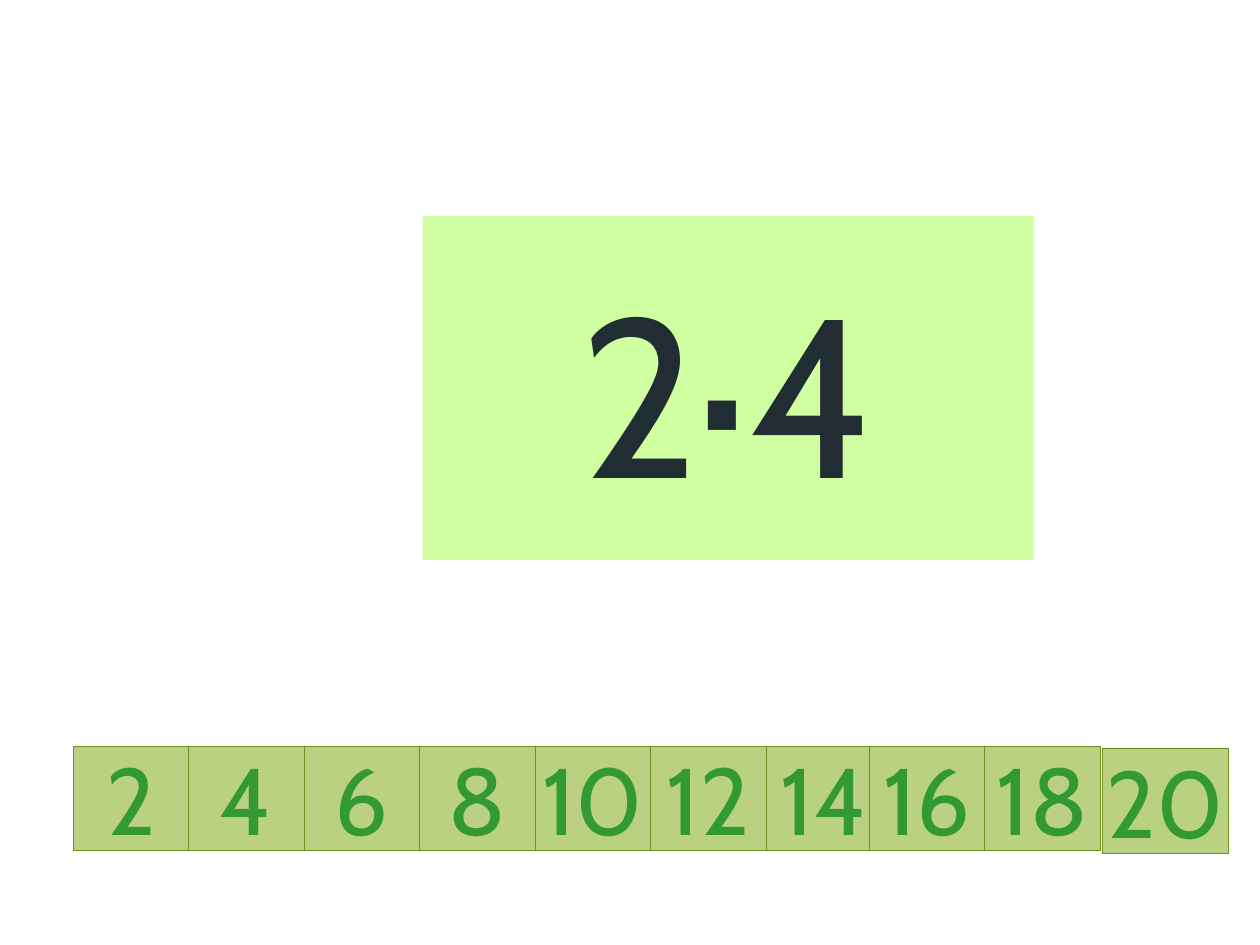
from lxml import etree
from pptx import Presentation
from pptx.dml.color import RGBColor
from pptx.enum.shapes import MSO_SHAPE
from pptx.enum.text import MSO_ANCHOR, PP_ALIGN
from pptx.oxml.ns import qn
from pptx.util import Inches, Pt

BUTTON = MSO_SHAPE.ACTION_BUTTON_CUSTOM
RECTANGLE = MSO_SHAPE.RECTANGLE
MIDDLE = MSO_ANCHOR.MIDDLE
CENTER = PP_ALIGN.CENTER

FONT = "Cabin"
BUTTON_FILL = RGBColor(0xB9, 0xD1, 0x81)
BUTTON_LINE = RGBColor(0x6C, 0x92, 0x1D)
BUTTON_TEXT = RGBColor(0x33, 0x99, 0x33)
CARD_FILL = RGBColor(0xCC, 0xFF, 0x99)
CARD_TEXT = RGBColor(0x21, 0x2D, 0x32)


def add_box(kind, text, left, top, width, height, *, fill, line, line_width, color, size):
    shape = slide.shapes.add_shape(
        kind, Inches(left), Inches(top), Inches(width), Inches(height))
    shape.shadow.inherit = False
    shape.fill.solid()
    shape.fill.fore_color.rgb = fill
    shape.line.color.rgb = line
    shape.line.width = Pt(line_width)
    frame = shape.text_frame
    frame.word_wrap = False
    frame.vertical_anchor = MIDDLE
    paragraph = frame.paragraphs[0]
    paragraph.alignment = CENTER
    run = paragraph.add_run()
    run.text = text
    run.font.name = FONT
    run.font.size = Pt(size)
    run.font.color.rgb = color
    return shape


def set_opacity(properties, percent):
    """Set the opacity of the solid fill inside a shape's or line's properties."""
    color = properties.find(qn("a:solidFill")).find(qn("a:srgbClr"))
    etree.SubElement(color, qn("a:alpha"), val=str(percent * 1000))


presentation = Presentation()
presentation.slide_width = Inches(10)
presentation.slide_height = Inches(7.5)
slide = presentation.slides.add_slide(presentation.slide_layouts[6])

# Answer buttons: multiples of two; from 16 on the row overlaps the button before
button_width = 11 / 12
for index in range(10):
    left, top, width = 0.58 + index * button_width, 5.92, button_width
    if index >= 7:
        left -= 0.1
    if index == 9:
        left, top, width = 8.75, 5.94, 1
    add_box(BUTTON, str(2 * (index + 1)), left, top, width, 0.83,
            fill=BUTTON_FILL, line=BUTTON_LINE, line_width=0.25,
            color=BUTTON_TEXT, size=54)

# Question card
card = add_box(RECTANGLE, "2·4", 3.36, 1.72, 4.84, 2.72,
               fill=CARD_FILL, line=CARD_FILL, line_width=0.75,
               color=CARD_TEXT, size=129)
card_properties = card._element.spPr
set_opacity(card_properties, 91)
set_opacity(card_properties.find(qn("a:ln")), 81)

presentation.save("out.pptx")
